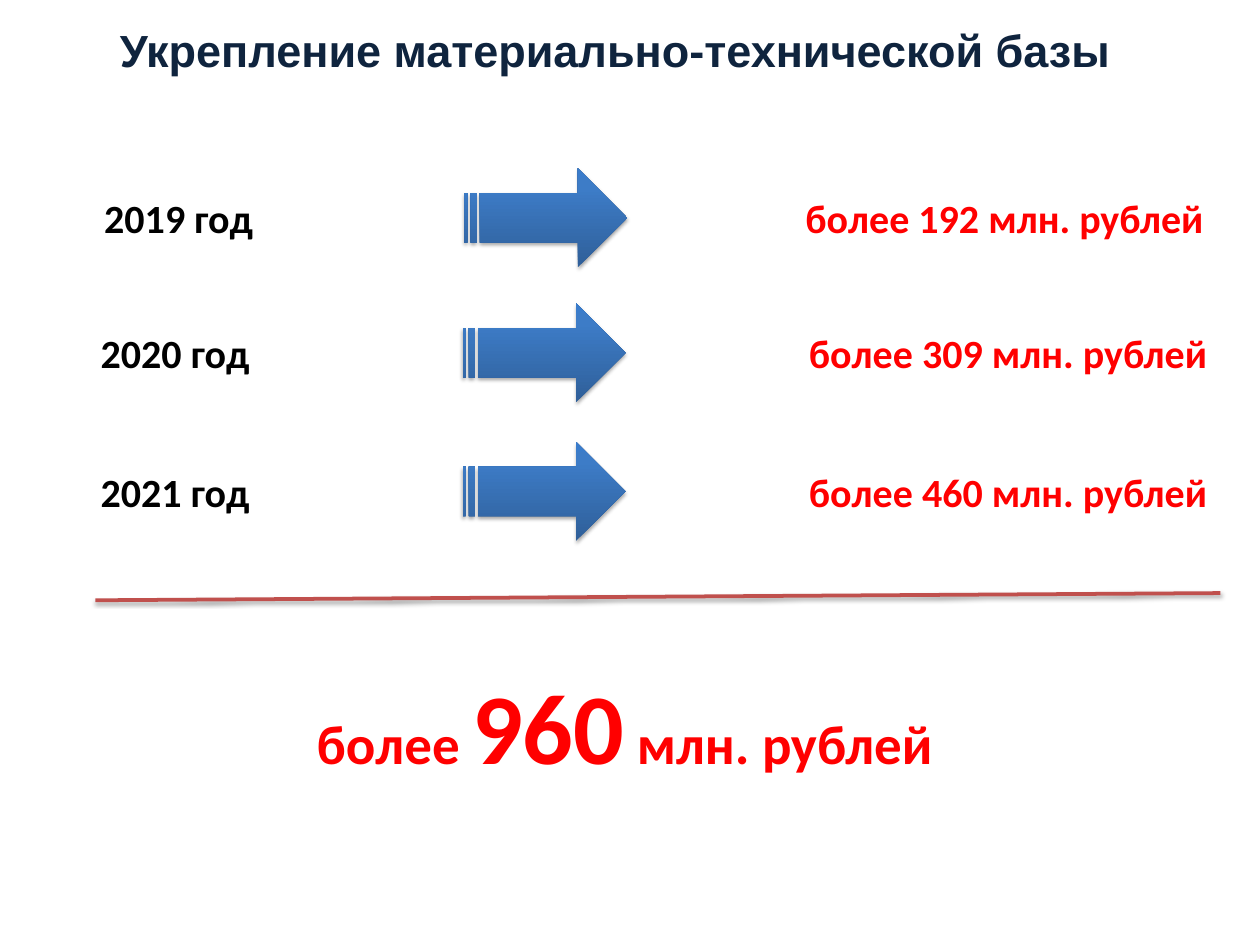
"""Build the slide on strengthening the material and technical base."""
from lxml import etree
from pptx import Presentation
from pptx.dml.color import RGBColor
from pptx.enum.shapes import MSO_CONNECTOR, MSO_SHAPE
from pptx.enum.text import MSO_ANCHOR, MSO_AUTO_SIZE, PP_ALIGN
from pptx.util import Inches, Pt

ARROW = MSO_SHAPE.STRIPED_RIGHT_ARROW
STRAIGHT = MSO_CONNECTOR.STRAIGHT
TOP = MSO_ANCHOR.TOP
CENTER = PP_ALIGN.CENTER
FIT = MSO_AUTO_SIZE.SHAPE_TO_FIT_TEXT

NAMESPACE = "http://schemas.openxmlformats.org/drawingml/2006/main"
STOPS = [(0, "2F5F99"), (80, "3D7CC7"), (100, "3A7CCB")]
GRADIENT = (
    f'<a:gradFill xmlns:a="{NAMESPACE}" rotWithShape="1"><a:gsLst>'
    + "".join(
        f'<a:gs pos="{share * 1000}"><a:srgbClr val="{color}"/></a:gs>'
        for share, color in STOPS
    )
    + '</a:gsLst><a:lin ang="16200000" scaled="0"/></a:gradFill>'
)
SHADOW = (
    f'<a:effectLst xmlns:a="{NAMESPACE}">'
    '<a:outerShdw blurRad="40000" dist="23000" dir="5400000" rotWithShape="0">'
    '<a:srgbClr val="000000"><a:alpha val="35000"/></a:srgbClr>'
    "</a:outerShdw></a:effectLst>"
)


def style(span, size, color, font="Calibri"):
    """Format one bold run."""
    span.font.name = font
    span.font.size = Pt(size)
    span.font.bold = True
    span.font.color.rgb = RGBColor.from_string(color)


def add_label(page, place, pieces, color):
    """Add an unwrapped text box made of (text, size) pieces."""
    box = page.shapes.add_textbox(*map(Inches, place))
    box.text_frame.word_wrap = False
    box.text_frame.auto_size = FIT
    para = box.text_frame.paragraphs[0]
    for text, size in pieces:
        span = para.add_run()
        span.text = text
        style(span, size, color)


deck = Presentation()
deck.slide_width, deck.slide_height = Inches(14), Inches(10.5)
page = deck.slides.add_slide(deck.slide_layouts[5])

title = page.shapes.title
title.left, title.top, title.width, title.height = map(Inches, (-0.27, 0.2, 14.49, 1.39))
title.text_frame.text = "Укрепление материально-технической базы"
title.text_frame.vertical_anchor = TOP
title.text_frame.margin_right = Inches(0.38)
heading = title.text_frame.paragraphs[0]
heading.alignment = CENTER
style(heading.runs[0], 36, "0F243E", "Arial")

rows = [
    ("2019 год", "более 192 млн. рублей", 2.1, 1.06, 5.16, 8.85),
    ("2020 год", "более 309 млн. рублей", 3.6, 1.02, 5.14, 8.89),
    ("2021 год", "более 460 млн. рублей", 5.14, 1.02, 5.14, 8.89),
]
for year, amount, top, year_left, arrow_left, amount_left in rows:
    add_label(page, (year_left, top, 1.86, 0.64), [(year, 32)], "000000")
    arrow = page.shapes.add_shape(
        ARROW, *map(Inches, (arrow_left, top - 0.23, 1.81, 1.1))
    )
    properties = arrow.element.spPr
    properties.append(etree.fromstring(GRADIENT))
    arrow.line.fill.background()
    properties.append(etree.fromstring(SHADOW))
    add_label(page, (amount_left, top, 4.67, 0.64), [(amount, 32)], "FF0000")

rule = page.shapes.add_connector(STRAIGHT, *map(Inches, (1.06, 6.67, 13.56, 6.59)))
rule.line.color.rgb = RGBColor.from_string("C0504D")
rule.line.width = Pt(3)
rule.element.spPr.append(etree.fromstring(SHADOW))

total = [("более ", 44), ("960", 80), (" млн. рублей", 44)]
add_label(page, (3.42, 7.33, 7.1, 1.45), total, "FF0000")

deck.save("out.pptx")
